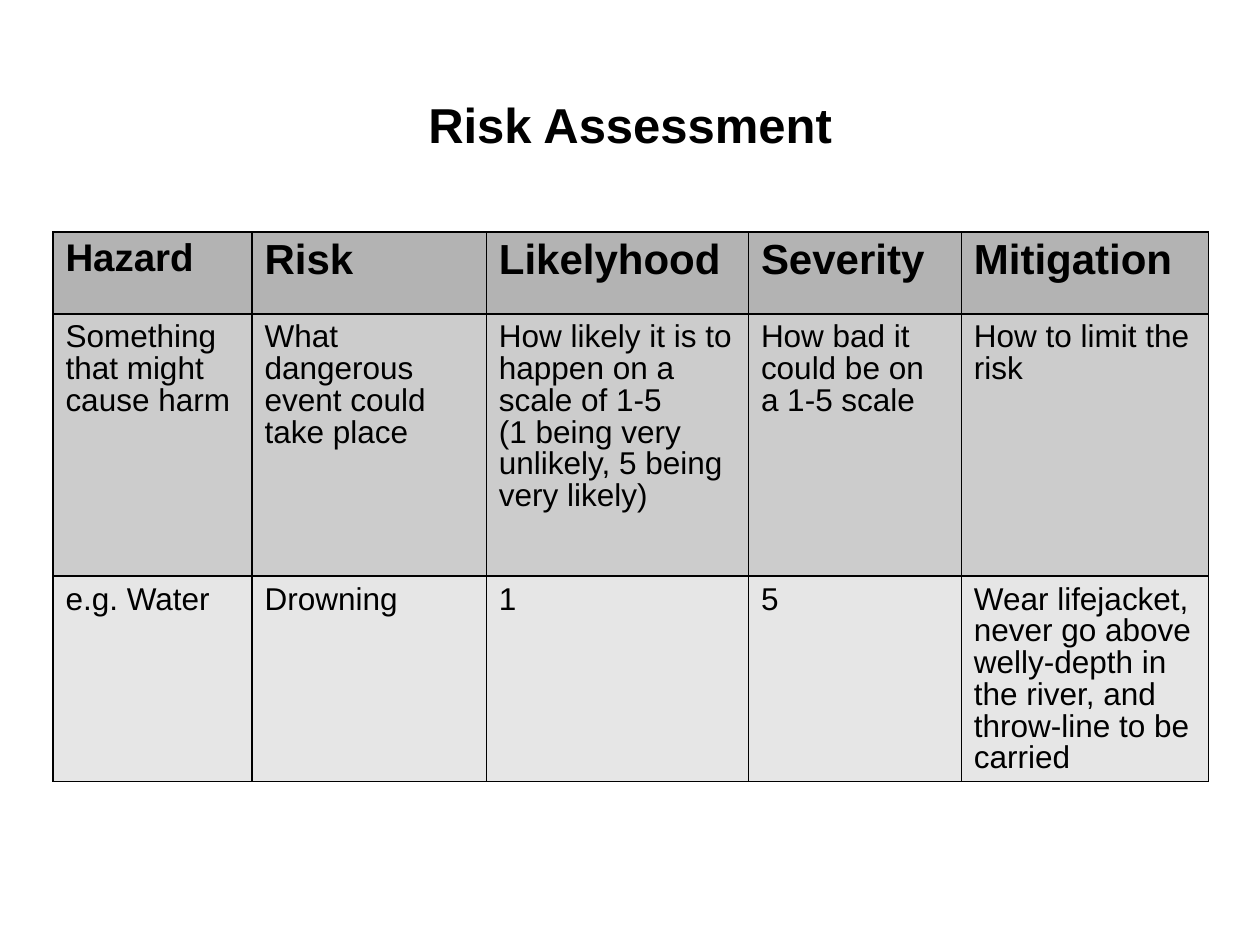
from lxml.etree import SubElement
from pptx import Presentation
from pptx.dml.color import RGBColor
from pptx.enum.text import MSO_ANCHOR, PP_ALIGN
from pptx.oxml.ns import qn
from pptx.util import Inches, Pt

BLACK = RGBColor(0x00, 0x00, 0x00)
ROW_FILLS = [
    RGBColor(0xB3, 0xB3, 0xB3),
    RGBColor(0xCC, 0xCC, 0xCC),
    RGBColor(0xE6, 0xE6, 0xE6),
]
FONT = "Arial"
COLUMN_WIDTHS = [1.58, 1.86, 2.08, 1.69, 1.96]
ROW_HEIGHTS = [0.65, 2.08, 1.13]
TABLE_HEIGHT = Inches(4.53)
RISKS = [
    ["Hazard", "Risk", "Likelyhood", "Severity", "Mitigation"],
    [
        "Something that might cause harm",
        "What dangerous event could take place",
        "How likely it is to happen on a scale of 1-5 \v(1 being very unlikely, 5 being very likely)",
        "How bad it could be on a 1-5 scale",
        "How to limit the risk",
    ],
    [
        "e.g. Water",
        "Drowning",
        "1",
        "5",
        "Wear lifejacket,\nnever go above welly-depth in the river, and throw-line to be carried",
    ],
]


def format_text(text_frame, size, bold, line_spacing, alignment):
    for paragraph in text_frame.paragraphs:
        paragraph.line_spacing = line_spacing
        paragraph.alignment = alignment
        for run in paragraph.runs:
            run.font.name = FONT
            run.font.size = Pt(size)
            run.font.bold = bold
            run.font.color.rgb = BLACK


def add_title(slide, wording):
    title = slide.shapes.title
    title.left, title.top = Inches(2.9), Inches(0.7)
    title.width, title.height = Inches(4.2), Inches(0.53)
    title.text_frame.text = wording
    title.text_frame.vertical_anchor = MSO_ANCHOR.TOP
    format_text(title.text_frame, 28, True, 1.0, PP_ALIGN.CENTER)


def add_borders(cell):
    properties = cell._tc.get_or_add_tcPr()
    for side in ("a:lnL", "a:lnR", "a:lnT", "a:lnB"):
        border = SubElement(properties, qn(side), w=str(Pt(1)))
        fill = SubElement(border, qn("a:solidFill"))
        SubElement(fill, qn("a:srgbClr"), val=str(BLACK))


def fill_cell(cell, wording, color, size, bold):
    cell.margin_top = Inches(0.07)
    cell.text_frame.text = wording
    format_text(cell.text_frame, size, bold, 0.9, PP_ALIGN.LEFT)
    add_borders(cell)
    cell.fill.solid()
    cell.fill.fore_color.rgb = color


def add_risk_table(slide):
    frame = slide.shapes.add_table(
        len(RISKS), len(COLUMN_WIDTHS),
        Inches(0.42), Inches(1.84), Inches(sum(COLUMN_WIDTHS)), TABLE_HEIGHT,
    )
    table = frame.table
    table.first_row = False
    table.horz_banding = False
    for column, width in zip(table.columns, COLUMN_WIDTHS):
        column.width = Inches(width)
    for row, height in zip(table.rows, ROW_HEIGHTS):
        row.height = Inches(height)
    frame.height = TABLE_HEIGHT
    for row_index, (entries, color) in enumerate(zip(RISKS, ROW_FILLS)):
        is_heading = row_index == 0
        for column_index, wording in enumerate(entries):
            heading_size = 22 if column_index == 0 else 24
            size = heading_size if is_heading else 18
            fill_cell(table.cell(row_index, column_index), wording, color, size, is_heading)


def main():
    presentation = Presentation()
    presentation.slide_width = Inches(10)
    presentation.slide_height = Inches(7.5)
    slide = presentation.slides.add_slide(presentation.slide_layouts[5])
    add_title(slide, "Risk Assessment")
    add_risk_table(slide)
    presentation.save("out.pptx")


if __name__ == "__main__":
    main()
